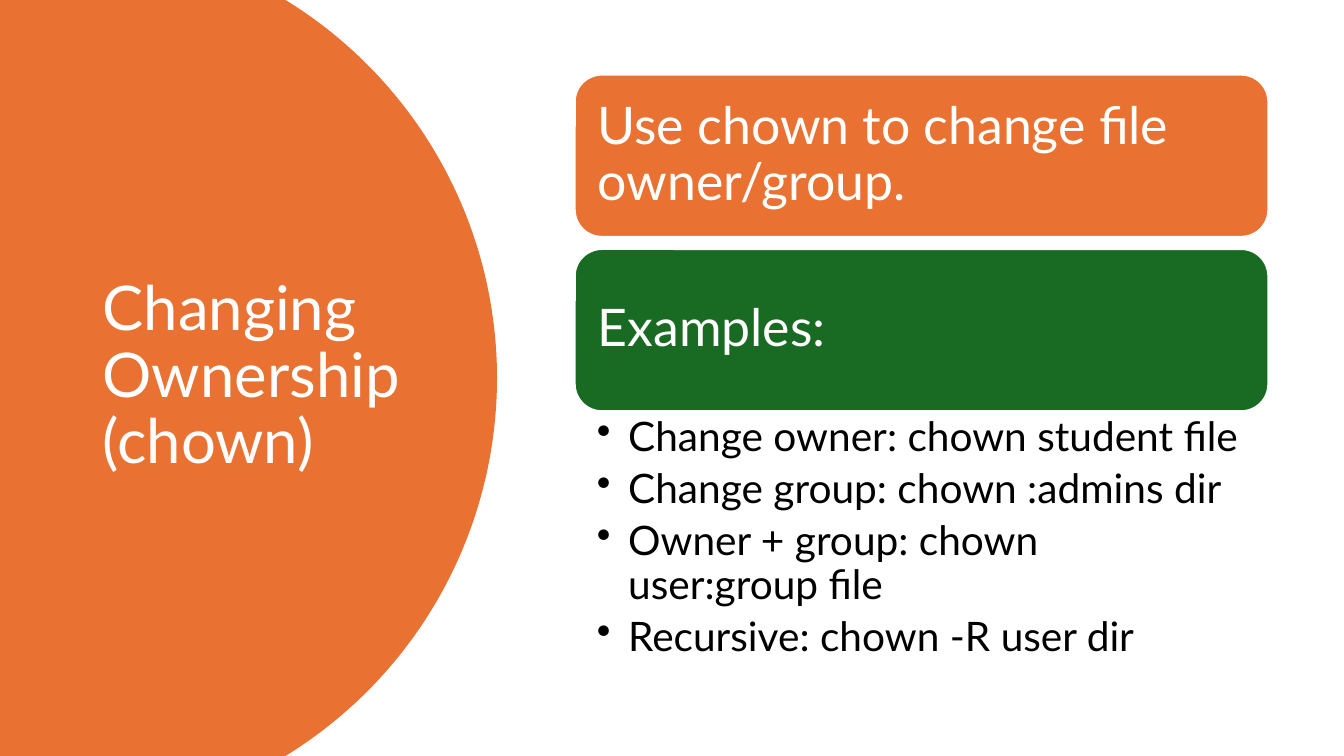
from math import asin, cos, sin

from lxml import etree
from pptx import Presentation
from pptx.dml.color import RGBColor
from pptx.enum.shapes import MSO_SHAPE as Shape
from pptx.enum.text import MSO_ANCHOR as Anchor, PP_ALIGN as Align
from pptx.oxml.ns import qn
from pptx.util import Inches, Pt

TITLE = "Changing Ownership (chown)"
CARDS = [("Use chown to change file owner/group.", "orange"), ("Examples:", "green")]
EXAMPLES = [
    "Change owner: chown student file",
    "Change group: chown :admins dir",
    "Owner + group: chown user:group file",
    "Recursive: chown -R user dir",
]
COLORS = {"orange": "E97132", "green": "196B24", "white": "FFFFFF", "black": "000000"}
FONT = "Lato"
WIDTH, HEIGHT = 13.33, 7.5
DISC_X, DISC_RADIUS = 0.53, 4.4
ARC_STEPS = 120
LEFT, CARD_TOP, CARD_WIDTH, CARD_HEIGHT, CARD_PITCH = 5.7, 0.74, 6.88, 1.61, 1.73


def color(name):
    return RGBColor.from_string(COLORS[name])


def paint(shape, fill):
    shape.shadow.inherit = False
    shape.fill.solid()
    shape.fill.fore_color.rgb = color(fill)


def write(frame, lines, size, ink, anchor, insets, space_after=0):
    """Fill a text frame; insets are left, top, right, bottom in inches."""
    frame.word_wrap = True
    frame.vertical_anchor = anchor
    (frame.margin_left, frame.margin_top,
     frame.margin_right, frame.margin_bottom) = map(Inches, insets)
    for index, line in enumerate(lines):
        para = frame.add_paragraph() if index else frame.paragraphs[0]
        para.text = line
        para.alignment = Align.LEFT
        para.line_spacing = 0.9
        para.space_after = Pt(space_after)
        para.font.name = FONT
        para.font.size = Pt(size)
        para.font.color.rgb = color(ink)


def add_bullet(para, indent):
    properties = para._p.get_or_add_pPr()
    properties.set("marL", str(Inches(indent)))
    properties.set("indent", str(-Inches(indent)))
    bullet = etree.Element(qn("a:buChar"), char="•")
    properties.insert_element_before(bullet, "a:tabLst", "a:defRPr", "a:extLst")


def add_disc(slide):
    """Draw the part of the large circle that lies on the slide."""
    middle = HEIGHT / 2
    reach = asin(middle / DISC_RADIUS)
    angles = [reach * (2 * step / ARC_STEPS - 1) for step in range(ARC_STEPS + 1)]
    arc = [(Inches(DISC_X + DISC_RADIUS * cos(angle)),
            Inches(middle + DISC_RADIUS * sin(angle))) for angle in angles]
    builder = slide.shapes.build_freeform(0, 0)
    builder.add_line_segments(arc + [(0, Inches(HEIGHT))], close=True)
    disc = builder.convert_to_shape()
    paint(disc, "orange")
    disc.line.fill.background()


def add_text_box(slide, *bounds):
    return slide.shapes.add_textbox(*map(Inches, bounds)).text_frame


def main():
    deck = Presentation()
    deck.slide_width, deck.slide_height = Inches(WIDTH), Inches(HEIGHT)
    slide = deck.slides.add_slide(deck.slide_layouts[6])

    add_disc(slide)
    title = add_text_box(slide, 0.92, 0.7, 3.23, 6.09)
    write(title, [TITLE], 44, "white", Anchor.MIDDLE, (0.1, 0.05, 0.1, 0.05))

    for index, (text, fill) in enumerate(CARDS):
        bounds = (LEFT, CARD_TOP + index * CARD_PITCH, CARD_WIDTH, CARD_HEIGHT)
        card = slide.shapes.add_shape(Shape.ROUNDED_RECTANGLE, *map(Inches, bounds))
        paint(card, fill)
        card.line.color.rgb = color("white")
        card.line.width = Pt(1.5)
        write(card.text_frame, [text], 37, "white", Anchor.MIDDLE, (0.15,) * 4)

    examples = add_text_box(slide, LEFT, 4.08, CARD_WIDTH, 2.64)
    write(examples, EXAMPLES, 29, "black", Anchor.TOP, (0.22, 0.05, 0.29, 0.05), 5.8)
    for para in examples.paragraphs:
        add_bullet(para, 0.31)

    deck.save("out.pptx")


if __name__ == "__main__":
    main()
